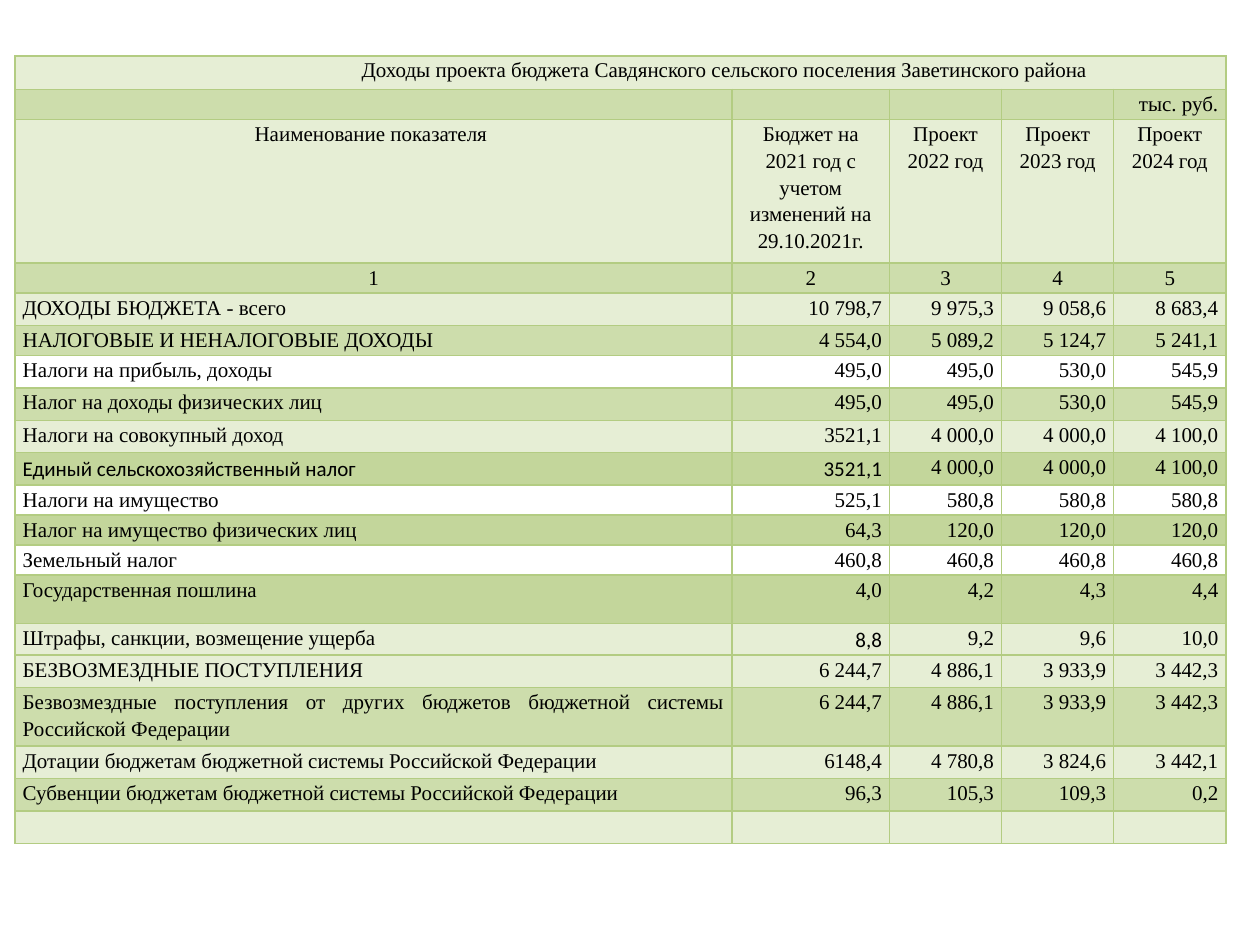
import pptx
import pptx.util
import pptx.dml.color
import pptx.enum.text
import pptx.oxml.ns
import lxml.etree

HUES = {"pale": "E6EED5", "mid": "CDDDAC", "deep": "C3D69B",
        "white": "FFFFFF", "line": "B3CC82", "ink": "000000"}
ALIGN = pptx.enum.text.PP_ALIGN
SERIF, SANS = "Times New Roman", "Calibri"
SIZE = 12
COLS = [5.69, 1.25, 0.89, 0.89, 0.89]
HEAD = "Доходы проекта бюджета Савдянского сельского поселения Заветинского района"
ROWS = [
    (0.27, "pale", [HEAD]),
    (0.24, "mid", ["", "", "", "", "тыс. руб."]),
    (1.15, "pale", ["Наименование показателя ",
                    "Бюджет на 2021 год с учетом изменений на 29.10.2021г.",
                    "Проект 2022 год", "Проект 2023 год", "Проект 2024 год"]),
    (0.24, "mid", ["1", "2", "3", "4", "5"]),
    (0.26, "pale", ["ДОХОДЫ БЮДЖЕТА - всего", "10 798,7", "9 975,3", "9 058,6", "8 683,4"]),
    (0.24, "mid", ["НАЛОГОВЫЕ И НЕНАЛОГОВЫЕ ДОХОДЫ", "4 554,0", "5 089,2", "5 124,7", "5 241,1"]),
    (0.26, "white", ["Налоги на прибыль, доходы", "495,0", "495,0", "530,0", "545,9"]),
    (0.26, "mid", ["Налог на доходы физических лиц", "495,0", "495,0", "530,0", "545,9"]),
    (0.26, "pale", ["Налоги на совокупный доход", "3521,1", "4 000,0", "4 000,0", "4 100,0"]),
    (0.26, "deep", ["Единый сельскохозяйственный налог", "3521,1", "4 000,0", "4 000,0", "4 100,0"]),
    (0.24, "white", ["Налоги на имущество", "525,1", "580,8", "580,8", "580,8"]),
    (0.24, "deep", ["Налог на имущество физических лиц", "64,3", "120,0", "120,0", "120,0"]),
    (0.24, "white", ["Земельный налог", "460,8", "460,8", "460,8", "460,8"]),
    (0.39, "deep", ["Государственная пошлина", "4,0", "4,2", "4,3", "4,4"]),
    (0.25, "pale", ["Штрафы, санкции, возмещение ущерба", "8,8", "9,2", "9,6", "10,0"]),
    (0.26, "pale", ["БЕЗВОЗМЕЗДНЫЕ ПОСТУПЛЕНИЯ", "6 244,7", "4 886,1", "3 933,9", "3 442,3"]),
    (0.47, "mid", ["Безвозмездные поступления от других бюджетов бюджетной системы Российской Федерации",
                   "6 244,7", "4 886,1", "3 933,9", "3 442,3"]),
    (0.26, "pale", ["Дотации бюджетам бюджетной системы Российской Федерации ",
                    "6148,4", "4 780,8", "3 824,6", "3 442,1"]),
    (0.26, "mid", ["Субвенции бюджетам бюджетной системы Российской Федерации ",
                   "96,3", "105,3", "109,3", "0,2"]),
    (0.26, "pale", ["", "", "", "", ""]),
]
CENTER = (2, 3)
GRANTS = 14
SANS_CELLS = {(9, 0), (9, 1), (14, 1)}


def color(name):
    return pptx.dml.color.RGBColor.from_string(HUES[name])


def border(cell):
    props = cell._tc.get_or_add_tcPr()
    tag = pptx.oxml.ns.qn
    for side in ("a:lnL", "a:lnR", "a:lnT", "a:lnB"):
        line = lxml.etree.SubElement(props, tag(side), w=str(pptx.util.Pt(1)))
        fill = lxml.etree.SubElement(line, tag("a:solidFill"))
        lxml.etree.SubElement(fill, tag("a:srgbClr"), val=HUES["line"])


def align(row, col):
    if row in CENTER:
        return ALIGN.CENTER
    if col:
        return ALIGN.RIGHT
    return ALIGN.JUSTIFY if row >= GRANTS else ALIGN.LEFT


def write(cell, text, side, face):
    para = cell.text_frame.paragraphs[0]
    para.text = text
    para.alignment = side
    para.line_spacing = 1.15
    for run in para.runs:
        run.font.size = pptx.util.Pt(SIZE)
        run.font.name = face
        run.font.color.rgb = color("ink")
    if not text:
        lxml.etree.SubElement(para._p, pptx.oxml.ns.qn("a:endParaRPr"), sz=str(SIZE * 100))


def indent(cell, gap):
    props = cell.text_frame.paragraphs[0]._p.get_or_add_pPr()
    props.set("marL", str(int(gap)))
    props.set("indent", "0")


def budget(slide, left, top, width, height):
    table = slide.shapes.add_table(len(ROWS), len(COLS), left, top, width, height).table
    table.first_row = table.horz_banding = False
    for col, share in zip(table.columns, COLS):
        col.width = int(width * share / sum(COLS))
    total = sum(row[0] for row in ROWS)
    for r, (share, hue, texts) in enumerate(ROWS):
        table.rows[r].height = int(height * share / total)
        for c in range(len(COLS)):
            cell = table.cell(r, c)
            border(cell)
            cell.fill.solid()
            cell.fill.fore_color.rgb = color(hue)
            cell.margin_left = cell.margin_right = pptx.util.Inches(0.06)
            cell.margin_top = cell.margin_bottom = 0
            text = texts[c] if c < len(texts) else ""
            write(cell, text, align(r, c), SANS if (r, c) in SANS_CELLS else SERIF)
    head = table.cell(0, 0)
    head.merge(table.cell(0, len(COLS) - 1))
    indent(head, width * 0.28)


def main():
    deck = pptx.Presentation()
    deck.slide_width = pptx.util.Inches(10)
    deck.slide_height = pptx.util.Inches(7.5)
    slide = deck.slides.add_slide(deck.slide_layouts[6])
    wide, high = deck.slide_width, deck.slide_height
    budget(slide, int(wide * 0.012), int(high * 0.059), int(wide * 0.961), int(high * 0.834))
    deck.save("out.pptx")


if __name__ == "__main__":
    main()
